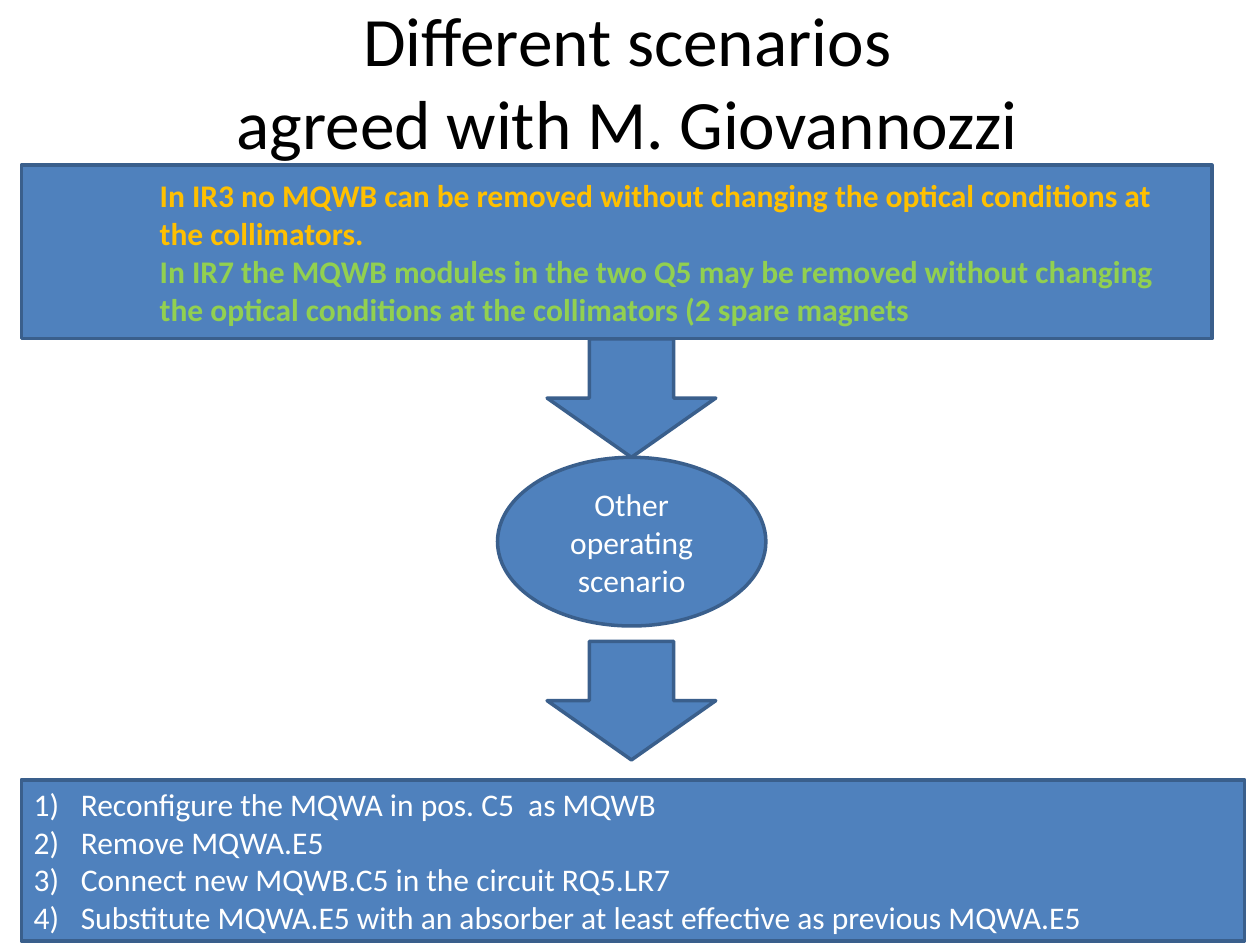
import pptx
import pptx.util
import pptx.dml.color
import pptx.enum.shapes
import pptx.enum.text
import lxml.etree
from pptx.oxml.ns import qn

Cm, Pt = pptx.util.Cm, pptx.util.Pt
RGBColor = pptx.dml.color.RGBColor
SHAPE = pptx.enum.shapes.MSO_SHAPE
ALIGN = pptx.enum.text.PP_ALIGN
MIDDLE = pptx.enum.text.MSO_ANCHOR.MIDDLE

BLACK = RGBColor(0x00, 0x00, 0x00)
WHITE = RGBColor(0xFF, 0xFF, 0xFF)
BLUE = RGBColor(0x4F, 0x81, 0xBD)
DARK_BLUE = RGBColor(0x3A, 0x5F, 0x8C)
AMBER = RGBColor(0xFF, 0xC0, 0x00)
GREEN = RGBColor(0x92, 0xD0, 0x50)

deck = pptx.Presentation()
deck.slide_width, deck.slide_height = Cm(25.4), Cm(19.05)
slide = deck.slides.add_slide(deck.slide_layouts[6])


def add_block(preset, left, top, width, height):
    block = slide.shapes.add_shape(preset, Cm(left), Cm(top), Cm(width), Cm(height))
    block.shadow.inherit = False
    block.fill.solid()
    block.fill.fore_color.rgb = BLUE
    block.line.color.rgb = DARK_BLUE
    block.line.width = Pt(2)
    block.text_frame.word_wrap = True
    block.text_frame.vertical_anchor = MIDDLE
    return block


def write_line(frame, index, text, color, align=ALIGN.LEFT, size=18, bold=False,
               margin=0, hanging=0, numbered=False):
    line = frame.paragraphs[0] if index == 0 else frame.add_paragraph()
    line.text = text
    line.alignment = align
    properties = line._p.get_or_add_pPr()
    properties.set("marL", str(Cm(margin)))
    properties.set("indent", str(-Cm(hanging)))
    if numbered:
        lxml.etree.SubElement(properties, qn("a:buFont"), typeface="+mj-lt")
        lxml.etree.SubElement(properties, qn("a:buAutoNum"), type="arabicParenR")
    line.font.name = "Calibri"
    line.font.size = Pt(size)
    line.font.bold = bold
    line.font.color.rgb = color


# Title
title = slide.shapes.add_textbox(Cm(0), Cm(0.03), Cm(25.3), Cm(3.18)).text_frame
title.word_wrap = True
title.vertical_anchor = MIDDLE
write_line(title, 0, "Different scenarios\vagreed with M. Giovannozzi", BLACK,
           ALIGN.CENTER, size=39.6)

# Operating scenario
scenario = add_block(SHAPE.OVAL, 10.03, 9.22, 5.41, 3.4)
write_line(scenario.text_frame, 0, "Other operating scenario", WHITE, ALIGN.CENTER)

# Arrows into and out of the scenario
for arrow_top in (6.83, 12.93):
    add_block(SHAPE.DOWN_ARROW, 11.03, arrow_top, 3.4, 2.39)

# Numbered actions
actions = add_block(SHAPE.RECTANGLE, 0.43, 15.72, 24.66, 3.25)
for index, action in enumerate((
    "Reconfigure the MQWA in pos. C5  as MQWB",
    "Remove MQWA.E5",
    "Connect new MQWB.C5 in the circuit RQ5.LR7",
    "Substitute MQWA.E5 with an absorber at least effective as previous MQWA.E5",
)):
    write_line(actions.text_frame, index, action, WHITE,
               margin=0.95, hanging=0.95, numbered=True)

# Removal conditions
conditions = add_block(SHAPE.RECTANGLE, 0.43, 3.33, 24, 3.5)
for index, (condition, color) in enumerate((
    ("In IR3 no MQWB can be removed without changing the optical conditions "
     "at the collimators.", AMBER),
    ("In IR7 the MQWB modules in the two Q5 may be removed without changing "
     "the optical conditions at the collimators (2 spare magnets", GREEN),
)):
    write_line(conditions.text_frame, index, condition, color, bold=True, margin=2.54)

deck.save("out.pptx")
